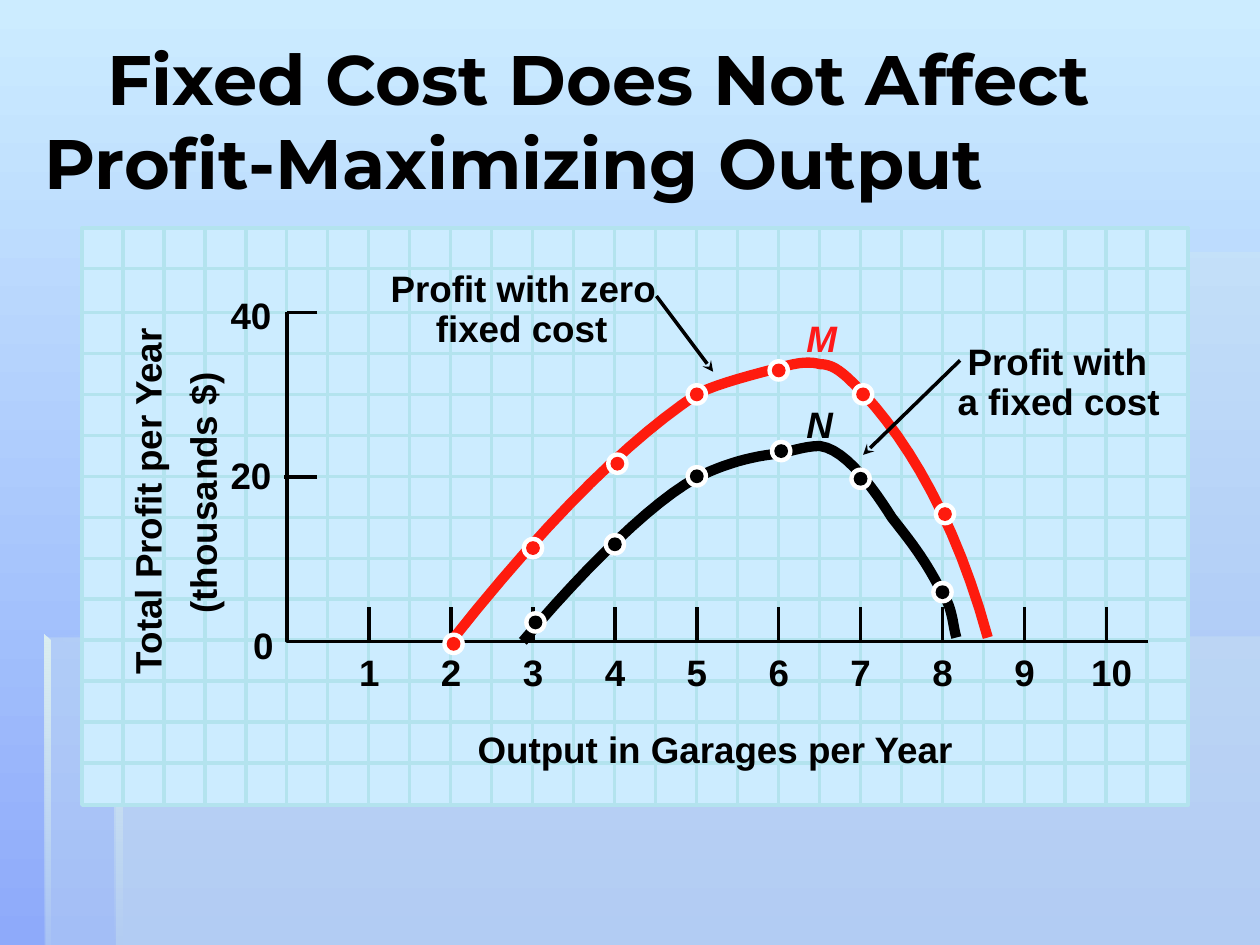
import dataclasses
import pptx
import pptx.dml.color
import pptx.enum.shapes
import pptx.enum.text
import pptx.oxml.ns
import pptx.oxml.xmlchemy
import pptx.util
from lxml import etree

Inches = pptx.util.Inches
COLORS = {
    "sky": "CCECFF", "deep": "8EAAFA", "veil": "D6EDEE", "edge": "DCEFF0",
    "shade": "C4D9DA", "grid": "B3E3EE", "ink": "000000", "title": "010000",
    "red": "FE1B0E", "peak": "FF1919", "white": "FFFFFF",
}
FIXED_COST_CURVE = [
    (1.87, 2.61), (2.38, 2.01), (2.9, 1.5), (3.25, 1.31),
    (3.47, 1.2), (3.69, 1.14), (3.9, 1.12), (4.04, 1.09), (4.12, 1.06), (4.23, 1.06),
    (4.44, 1.09), (4.66, 1.41), (4.8, 1.63), (4.99, 1.87), (5.07, 1.98), (5.2, 2.23),
    (5.28, 2.34), (5.28, 2.47), (5.31, 2.58),
]
ZERO_COST_CURVE = [
    (1.3, 2.61), (2.14, 1.55), (2.76, 0.98), (3.25, 0.65),
    (3.39, 0.57), (3.71, 0.49), (3.9, 0.44), (4.01, 0.41), (4.12, 0.38), (4.23, 0.41),
    (4.36, 0.41), (4.45, 0.52), (4.58, 0.65), (4.93, 1.03), (5.31, 1.66), (5.56, 2.58),
]
FIXED_COST_DOTS = [(1.97, 2.46), (2.6, 1.84), (3.25, 1.3), (3.92, 1.1), (4.55, 1.32), (5.2, 2.22)]
ZERO_COST_DOTS = [(1.32, 2.63), (1.95, 1.87), (2.62, 1.2), (3.25, 0.65), (3.9, 0.46),
                  (4.57, 0.65), (5.22, 1.6)]


@dataclasses.dataclass
class Box:
    left: float
    top: float
    width: float
    height: float

    def inner(self, left, top, width, height):
        return Box(self.left + left, self.top + top, width, height)

    def lengths(self):
        return [Inches(value) for value in (self.left, self.top, self.width, self.height)]


def color(name):
    return pptx.dml.color.RGBColor.from_string(COLORS[name])


def add_mark(parent, tag, **values):
    mark = etree.SubElement(parent, pptx.oxml.ns.qn(tag))
    for key, value in values.items():
        mark.set(key, value)
    return mark


def paint(fill, names, angle=270):
    if len(names) == 1:
        fill.solid()
        fill.fore_color.rgb = color(names[0])
        return
    fill.gradient()
    fill.gradient_angle = angle
    for stop, name in zip(fill.gradient_stops, names):
        stop.color.rgb = color(name)


def write(frame, text, size=21, font="Arial", ink="ink", bold=True, italic=False,
          anchor=pptx.enum.text.MSO_ANCHOR.TOP, inset=0):
    frame.word_wrap = True
    frame.auto_size = pptx.enum.text.MSO_AUTO_SIZE.NONE
    frame.vertical_anchor = anchor
    frame.margin_left = frame.margin_right = Inches(inset)
    frame.margin_top = frame.margin_bottom = Inches(inset / 2)
    para = frame.paragraphs[0]
    para.alignment = pptx.enum.text.PP_ALIGN.LEFT
    span = para.add_run()
    span.text = text
    span.font.size = pptx.util.Pt(size)
    span.font.name = font
    span.font.bold = bold
    span.font.italic = italic
    span.font.color.rgb = color(ink)
    return para


def add_label(page, box, text, rotation=0, **format):
    label = page.shapes.add_textbox(*box.lengths())
    label.rotation = rotation
    write(label.text_frame, text, **format)


def add_line(page, box, start, end, ink="ink", arrow=False):
    ends = [Inches(value) for value in (box.left + start[0], box.top + start[1],
                                        box.left + end[0], box.top + end[1])]
    line = page.shapes.add_connector(pptx.enum.shapes.MSO_CONNECTOR.STRAIGHT, *ends)
    line.line.color.rgb = color(ink)
    line.line.width = pptx.util.Pt(2)
    if arrow:
        add_mark(line.line._get_or_add_ln(), "a:headEnd", type="stealth")
    add_mark(line._element.spPr, "a:effectLst")


def add_outline(page, box, points, closed=False):
    places = [(Inches(box.left + x), Inches(box.top + y)) for x, y in points]
    builder = page.shapes.build_freeform(*places[0])
    builder.add_line_segments(places[1:], close=closed)
    outline = builder.convert_to_shape()
    outline.shadow.inherit = False
    return outline


def add_stroke(page, box, points, ink, width):
    stroke = add_outline(page, box, points)
    stroke.fill.background()
    stroke.line.color.rgb = color(ink)
    stroke.line.width = pptx.util.Pt(width)


def add_preset(page, box, kind, fill, line=None):
    shape = page.shapes.add_shape(kind, *box.lengths())
    shape.shadow.inherit = False
    paint(shape.fill, [fill])
    if line:
        shape.line.color.rgb = color(line)
        shape.line.width = pptx.util.Pt(2)
    else:
        shape.line.fill.background()


def curve_points(knots, steps=12):
    points = [knots[0]]
    for first in range(0, len(knots) - 1, 3):
        for step in range(1, steps + 1):
            t = step / steps
            weights = ((1 - t) ** 3, 3 * t * (1 - t) ** 2, 3 * t * t * (1 - t), t ** 3)
            points.append(tuple(sum(weight * knot[axis] for weight, knot
                                    in zip(weights, knots[first:first + 4])) for axis in (0, 1)))
    return points


def add_backdrop(page, box):
    paint(page.background.fill, ["sky", "deep"])
    right, bottom = box.width, box.height
    panes = [
        ([(0.92, 5.05), (0.92, bottom), (right, bottom), (right, 5.05)], ["veil"], [30], 0),
        ([(0.94, 5.06), (0.36, 5.06), (0.36, bottom), (right, bottom), (right, 2), (0.94, 2)],
         ["veil"], [30], 0),
        ([(0.91, bottom), (0.97, bottom), (0.96, 5.08), (0.91, 5.04)],
         ["edge", "veil"], [100, 0], 270),
        ([(0.35, 5.04), (0.35, 5.09), (5.35, 5.09), (5.35, 5.04)],
         ["veil", "shade"], [0, 100], 0),
        ([(0.35, 5.04), (0.35, bottom), (0.4, bottom), (0.4, 5.09)],
         ["edge", "veil"], [100, 10], 270),
    ]
    for points, names, opacities, angle in panes:
        pane = add_outline(page, box, points, closed=True)
        paint(pane.fill, names, angle)
        pane.line.fill.background()
        for tint, opacity in zip(pane._element.spPr.xpath(".//a:srgbClr"), opacities):
            add_mark(tint, "a:alpha", val=str(opacity * 1000))


def add_title(page, box):
    title = page.shapes.title
    title.left, title.top, title.width, title.height = box.lengths()
    para = write(title.text_frame, "Fixed Cost Does Not Affect Profit-Maximizing Output", size=40,
                 font="Montserrat", ink="title", anchor=pptx.enum.text.MSO_ANCHOR.MIDDLE, inset=0.1)
    margins = para._p.get_or_add_pPr()
    margins.set("marL", "0")
    margins.set("indent", str(Inches(0.5)))


def add_grid(page, box):
    add_preset(page, box, pptx.enum.shapes.MSO_SHAPE.RECTANGLE, "sky", "grid")
    cell = box.width / 27
    for y in [0.32] + [0.67 + cell * row for row in range(12)]:
        add_line(page, box, (0, y), (box.width, y), "grid")
    for column in range(1, 27):
        add_line(page, box, (cell * column, box.height), (cell * column, 0), "grid")


def add_axes(page, box):
    step = 0.65
    for output in range(1, 11):
        x = step * output
        add_line(page, box, (x, box.height - 0.27), (x, box.height))
        shift = 0.08 if output < 10 else 0.12
        add_label(page, box.inner(x - shift, 2.68, 0.5, 0.44), str(output))
    for y, start in ((0, 0), (box.height / 2, -0.03)):
        add_line(page, box, (0.24, y), (start, y))
    for text, x, y in (("40", -0.45, -0.16), ("20", -0.45, 1.11), ("0", -0.27, 2.46)):
        add_label(page, box.inner(x, y, 0.5, 0.44), text)
    add_label(page, box.inner(-2.59, 1.22, 2.95, 0.35), "Total Profit per Year", rotation=270)
    add_label(page, box.inner(-1.67, 1.22, 1.99, 0.35), "(thousands $)", rotation=270)
    add_label(page, box.inner(1.51, 3.29, 3.85, 0.44), "Output in Garages per Year")


def add_curves(page, box):
    add_stroke(page, box, curve_points(FIXED_COST_CURVE), "ink", 5.88)
    add_stroke(page, box, curve_points(ZERO_COST_CURVE), "red", 5.88)
    add_stroke(page, box, [(box.width, box.height), (0, box.height), (0, 0)], "ink", 2)
    for dots, ink in ((FIXED_COST_DOTS, "ink"), (ZERO_COST_DOTS, "red")):
        for x, y in dots:
            for size, fill in ((0.18, "white"), (0.11, ink)):
                add_preset(page, box.inner(x - size / 2, y - size / 2, size, size),
                           pptx.enum.shapes.MSO_SHAPE.OVAL, fill)


def add_callouts(page, box):
    for text, x, y, width in (("Profit with", 5.4, 0.21, 1.63), ("a fixed cost", 5.32, 0.53, 1.74),
                              ("Profit with zero", 0.82, -0.37, 2.29),
                              ("fixed cost", 1.18, -0.05, 1.53)):
        add_label(page, box.inner(x, y, width, 0.44), text)
    add_label(page, box.inner(4.12, 0.71, 0.44, 0.44), "N", italic=True)
    add_label(page, box.inner(4.12, 0.03, 0.47, 0.44), "M", italic=True, ink="peak")
    add_line(page, box, (4.57, 1.13), (5.34, 0.38), arrow=True)
    add_line(page, box, (3.38, 0.47), (2.93, -0.13), arrow=True)


def main():
    deck = pptx.Presentation()
    deck.slide_width, deck.slide_height = Inches(10), Inches(7.5)
    page = deck.slides.add_slide(deck.slide_layouts[5])
    plot = Box(2.28, 2.48, 6.83, 2.61)
    add_backdrop(page, Box(0, 0, 10, 7.5))
    add_title(page, Box(0.25, 0.24, 9.75, 1.42))
    add_grid(page, Box(0.65, 1.81, 8.78, 4.58))
    add_axes(page, plot)
    add_curves(page, plot)
    add_callouts(page, plot)
    deck.save("out.pptx")


if __name__ == "__main__":
    main()
